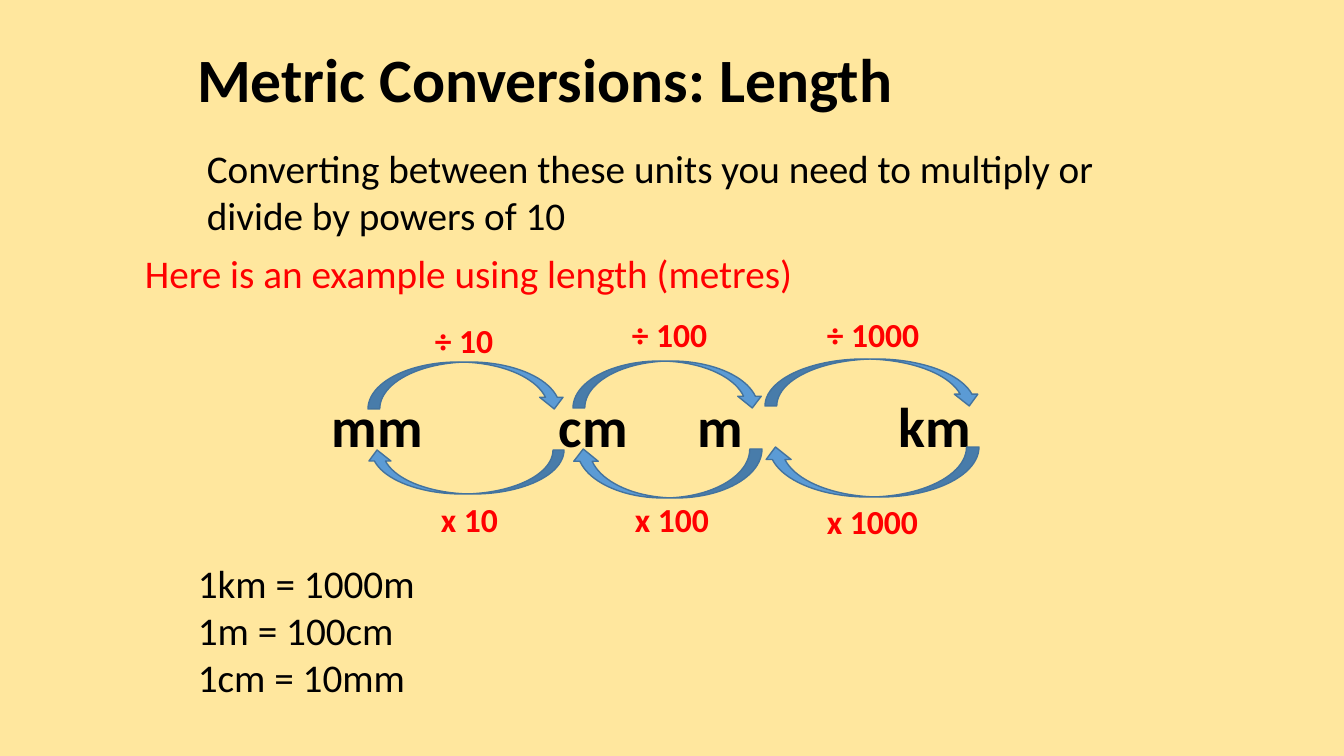
"""Build the slide on metric conversions of length."""
from typing import NamedTuple

from lxml import etree
from pptx import Presentation
from pptx.dml.color import RGBColor
from pptx.enum.shapes import MSO_SHAPE
from pptx.enum.text import MSO_ANCHOR, MSO_AUTO_SIZE, PP_ALIGN
from pptx.oxml.ns import qn
from pptx.util import Pt

PX = 12192000 / 1344
TITLE_ONLY = 5
ARROW = MSO_SHAPE.CURVED_DOWN_ARROW
LEFT = PP_ALIGN.LEFT
TOP = MSO_ANCHOR.TOP
NO_FIT = MSO_AUTO_SIZE.NONE
FONT = "Calibri"
BLACK, RED = "000000", "FF0000"
BACKGROUND, ARROW_FILL, ARROW_LINE = "FFE79E", "5B9BD5", "43739E"


class Area(NamedTuple):
    left: int
    top: int
    width: int
    height: int


class Conversion(NamedTuple):
    text: str
    label: Area
    arrow: Area
    rotation: int


CONVERSIONS = [
    Conversion("÷ 10", Area(425, 315, 80, 50), Area(368, 362, 198, 47), 0),
    Conversion("÷ 100", Area(622, 309, 97, 50), Area(573, 361, 191, 47), 0),
    Conversion("÷ 1000", Area(817, 309, 114, 50), Area(765, 359, 216, 47), 0),
    Conversion("x 10", Area(431, 494, 78, 50), Area(366, 450, 198, 44), 180),
    Conversion("x 100", Area(625, 494, 95, 50), Area(571, 449, 191, 49), 180),
    Conversion("x 1000", Area(817, 496, 112, 50), Area(763, 447, 216, 50), 180),
]
UNIT_TABS = {"mm": 187, "cm": 414, "m": 553, "km": 754}
EQUATIONS = ["1km = 1000m", "1m = 100cm", "1cm = 10mm"]


def emu(pixels: int) -> int:
    return round(pixels * PX)


def rgb(value: str) -> RGBColor:
    return RGBColor.from_string(value)


def place(shape, area: Area) -> None:
    shape.left, shape.top, shape.width, shape.height = map(emu, area)


def write(para, text: str, size: int = 28, color: str = BLACK, bold: bool = False) -> None:
    para.alignment = LEFT
    span = para.add_run()
    span.text = text
    span.font.name = FONT
    span.font.size = Pt(size)
    span.font.bold = bold
    span.font.color.rgb = rgb(color)


def add_text(page, area: Area, lines: list[str], wrap: bool = True, **style):
    box = page.shapes.add_textbox(*map(emu, area))
    frame = box.text_frame
    frame.word_wrap = wrap
    for index, line in enumerate(lines):
        para = frame.add_paragraph() if index else frame.paragraphs[0]
        write(para, line, **style)
    return box


def add_title(page, area: Area, text: str) -> None:
    title = page.shapes.title
    place(title, area)
    frame = title.text_frame
    frame.auto_size = NO_FIT
    frame.vertical_anchor = TOP
    write(frame.paragraphs[0], text, size=44, bold=True)


def add_units(box) -> None:
    para = box.text_frame.add_paragraph()
    para.space_before = Pt(68)
    tabs = etree.SubElement(para._p.get_or_add_pPr(), qn("a:tabLst"))
    for position in UNIT_TABS.values():
        etree.SubElement(tabs, qn("a:tab"), pos=str(emu(position)), algn="l")
    write(para, "".join(f"\t{unit}" for unit in UNIT_TABS), size=40, bold=True)


def add_conversion(page, conversion: Conversion) -> None:
    arrow = page.shapes.add_shape(ARROW, *map(emu, conversion.arrow))
    arrow.rotation = conversion.rotation
    arrow.shadow.inherit = False
    arrow.fill.solid()
    arrow.fill.fore_color.rgb = rgb(ARROW_FILL)
    arrow.line.color.rgb = rgb(ARROW_LINE)
    arrow.line.width = Pt(1)
    add_text(page, conversion.label, [conversion.text], wrap=False,
             size=24, color=RED, bold=True)


def main() -> None:
    deck = Presentation()
    deck.slide_width, deck.slide_height = emu(1344), emu(756)
    page = deck.slides.add_slide(deck.slide_layouts[TITLE_ONLY])
    page.background.fill.solid()
    page.background.fill.fore_color.rgb = rgb(BACKGROUND)
    add_title(page, Area(187, 36, 800, 85), "Metric Conversions: Length")
    add_text(page, Area(197, 139, 951, 105),
             ["Converting between these units you need to multiply or divide by powers of 10"])
    example = add_text(page, Area(135, 244, 938, 221),
                       ["Here is an example using length (metres)"], color=RED)
    add_units(example)
    for conversion in CONVERSIONS:
        add_conversion(page, conversion)
    add_text(page, Area(188, 554, 252, 152), EQUATIONS)
    deck.save("out.pptx")


if __name__ == "__main__":
    main()
